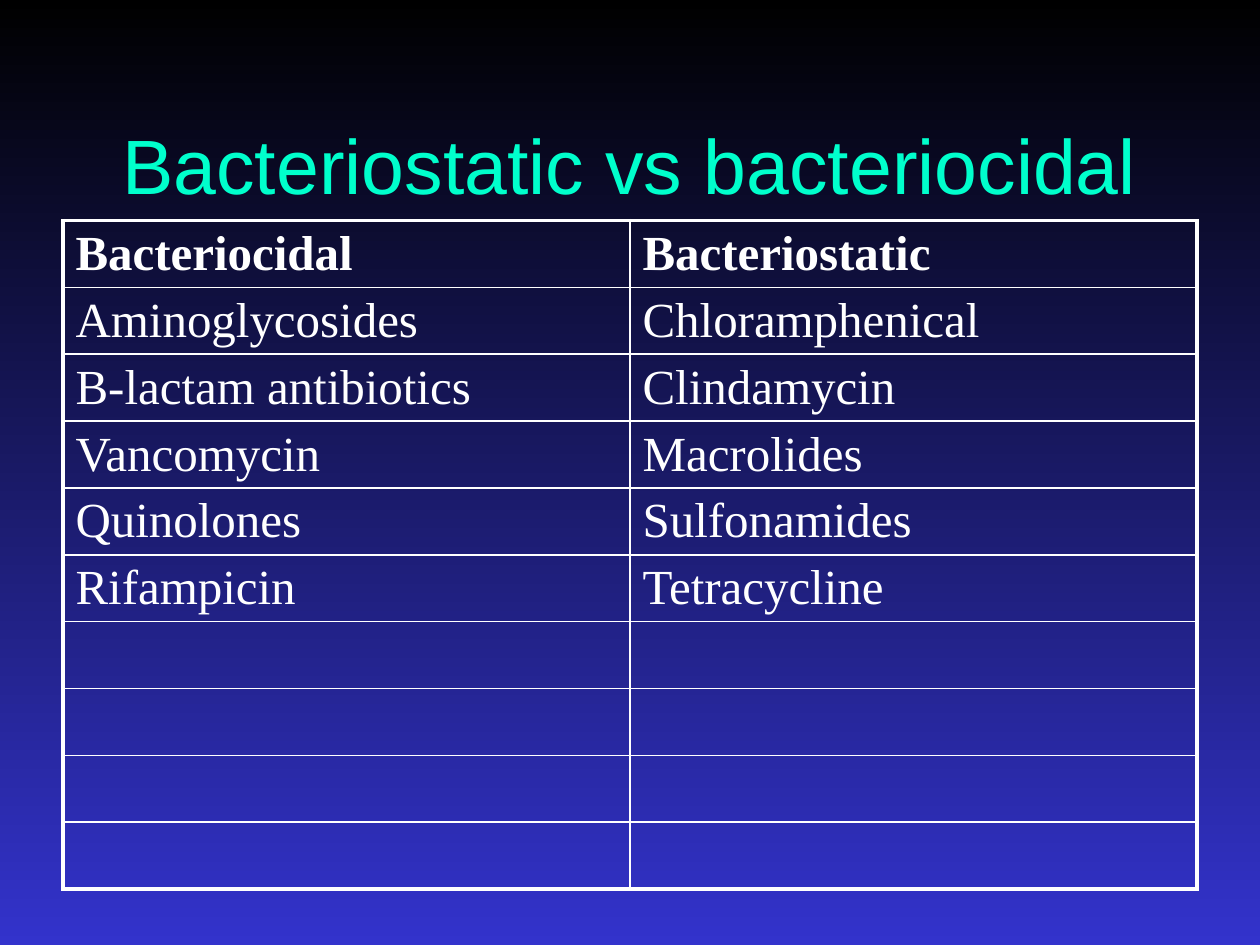
from typing import NamedTuple

from pptx import Presentation
from pptx.dml.color import RGBColor
from pptx.enum.text import MSO_ANCHOR, MSO_AUTO_SIZE, PP_ALIGN
from pptx.oxml.ns import qn
from pptx.util import Inches, Pt
from lxml.etree import SubElement

BLACK = RGBColor(0x00, 0x00, 0x00)
BLUE = RGBColor(0x33, 0x33, 0xCC)
MINT = RGBColor(0x00, 0xFF, 0xCC)
WHITE = RGBColor(0xFF, 0xFF, 0xFF)

WIDTH, HEIGHT = Inches(10), Inches(7.5)
ROW_COUNT = 10
ROW_HEIGHT = Inches(0.53)
OUTER, INNER = 2.25, 1


class DrugPair(NamedTuple):
    bacteriocidal: str
    bacteriostatic: str


DRUGS = [
    DrugPair("Bacteriocidal", "Bacteriostatic"),
    DrugPair("Aminoglycosides", "Chloramphenical"),
    DrugPair("B-lactam antibiotics", "Clindamycin"),
    DrugPair("Vancomycin", "Macrolides"),
    DrugPair("Quinolones", "Sulfonamides"),
    DrugPair("Rifampicin", "Tetracycline"),
]


def write(frame, text: str, *, font: str, size: float, color: RGBColor,
          bold: bool = False, align=PP_ALIGN.LEFT) -> None:
    paragraph = frame.paragraphs[0]
    paragraph.alignment = align
    run = paragraph.add_run()
    run.text = text
    run.font.name = font
    run.font.size = Pt(size)
    run.font.bold = bold
    run.font.color.rgb = color


def draw_borders(cell, widths: dict[str, float], color: RGBColor) -> None:
    properties = cell._tc.get_or_add_tcPr()
    for side, width in widths.items():
        line = SubElement(properties, qn(f"a:ln{side}"), w=str(Pt(width)))
        fill = SubElement(line, qn("a:solidFill"))
        SubElement(fill, qn("a:srgbClr"), val=str(color))


def draw_background(slide) -> None:
    fill = slide.background.fill
    fill.gradient()
    fill.gradient_angle = 270
    for stop, color in zip(fill.gradient_stops, (BLACK, BLUE)):
        stop.color.rgb = color


def draw_title(slide, text: str) -> None:
    title = slide.shapes.title
    title.left, title.top = int(WIDTH * 0.075), int(HEIGHT * 0.09)
    title.width, title.height = int(WIDTH * 0.85), Inches(1.25)
    title.text_frame.auto_size = MSO_AUTO_SIZE.NONE
    title.text_frame.vertical_anchor = MSO_ANCHOR.MIDDLE
    write(title.text_frame, text, font="Arial", size=44, color=MINT,
          align=PP_ALIGN.CENTER)


def draw_drug_table(slide, drugs: list[DrugPair]) -> None:
    columns = len(DrugPair._fields)
    table = slide.shapes.add_table(
        ROW_COUNT, columns, int(WIDTH * 0.05), Inches(1.75),
        int(WIDTH * 0.9), ROW_HEIGHT * ROW_COUNT).table
    table.first_row = table.horz_banding = False

    for row in range(ROW_COUNT):
        for column in range(columns):
            cell = table.cell(row, column)
            draw_borders(cell, {
                "L": OUTER if column == 0 else INNER,
                "R": OUTER if column == columns - 1 else INNER,
                "T": OUTER if row == 0 else INNER,
                "B": OUTER if row == ROW_COUNT - 1 else INNER,
            }, WHITE)
            cell.fill.background()
            if row < len(drugs):
                write(cell.text_frame, drugs[row][column], size=28,
                      font="Times New Roman", color=WHITE, bold=row == 0)


def main() -> None:
    presentation = Presentation()
    presentation.slide_width, presentation.slide_height = WIDTH, HEIGHT
    title_only = presentation.slide_layouts[5]
    slide = presentation.slides.add_slide(title_only)

    draw_background(slide)
    draw_title(slide, "Bacteriostatic vs bacteriocidal")
    draw_drug_table(slide, DRUGS)
    presentation.save("out.pptx")


if __name__ == "__main__":
    main()
